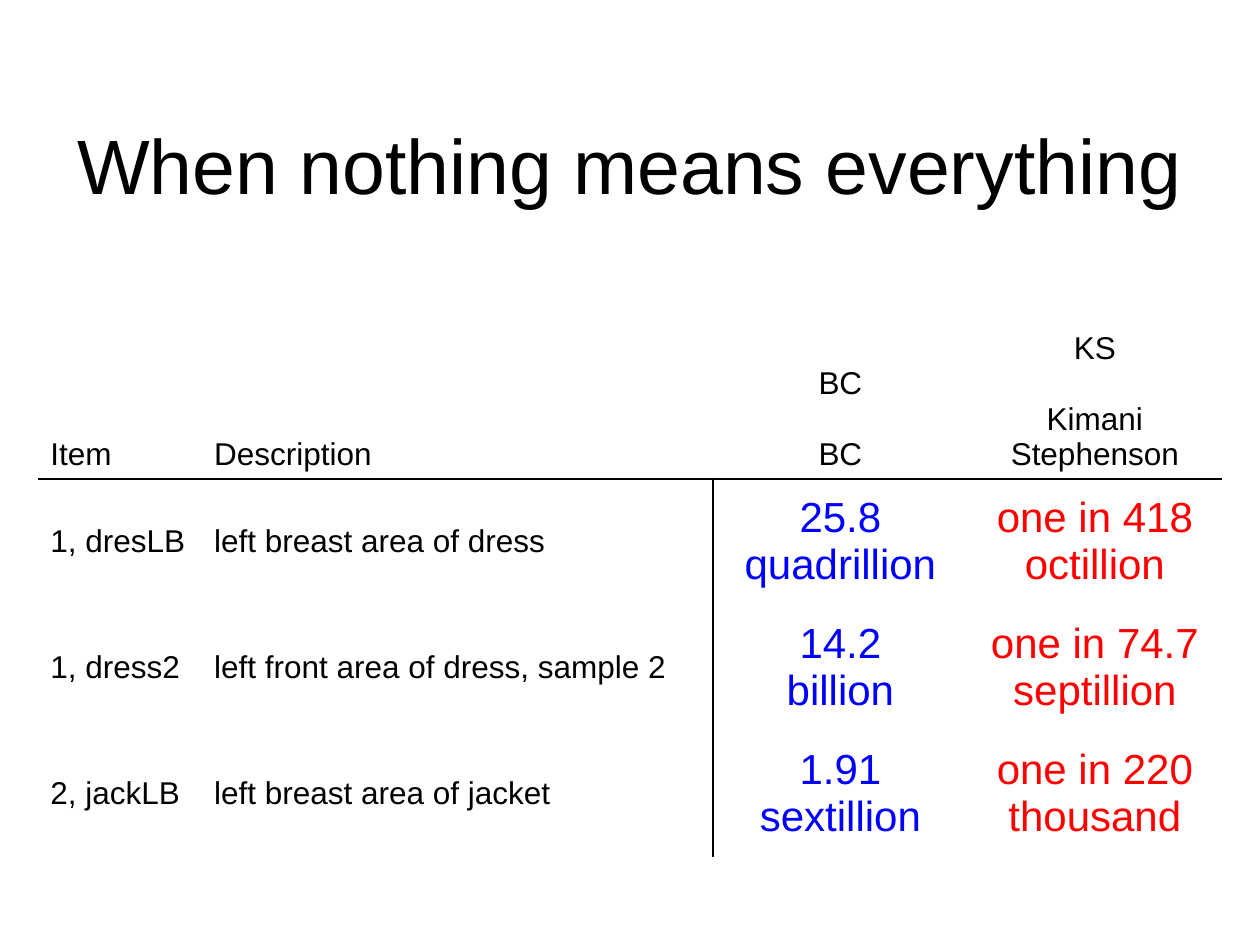
from dataclasses import dataclass

from lxml.etree import SubElement
from pptx import Presentation
from pptx.dml.color import RGBColor
from pptx.enum.text import MSO_ANCHOR, PP_ALIGN
from pptx.oxml.ns import qn
from pptx.util import Inches, Pt

BLACK = RGBColor(0, 0, 0)
BLUE = RGBColor(0, 0, 255)
RED = RGBColor(255, 0, 0)
FONT = "Arial"
COLS = (1.3, 4.06, 2.02, 2.02)
ROWS = (1.3, 1, 1, 1)
HEAD = ("Item", "Description", "BC\nBC", "KS\nKimani Stephenson")
BODY = (
    ("1, dresLB", "left breast area of dress", "25.8 quadrillion", "one in 418 octillion"),
    ("1, dress2", "left front area of dress, sample 2", "14.2\vbillion", "one in 74.7 septillion"),
    ("2, jackLB", "left breast area of jacket", "1.91 sextillion", "one in 220 thousand"),
)


@dataclass(frozen=True)
class Style:
    size: int
    color: RGBColor
    align: PP_ALIGN


TITLE = Style(44, BLACK, PP_ALIGN.CENTER)
LEFT = Style(18, BLACK, PP_ALIGN.LEFT)
LABEL = Style(18, BLACK, PP_ALIGN.CENTER)
BODY_LOOK = (LEFT, LEFT, Style(24, BLUE, PP_ALIGN.CENTER), Style(24, RED, PP_ALIGN.CENTER))
HEAD_LOOK = (LEFT, LEFT, LABEL, LABEL)


def write(frame, text: str, style: Style) -> None:
    frame.text = text
    for i, para in enumerate(frame.paragraphs):
        para.alignment = style.align
        para.space_before = Pt(20.5 if i else 0)
        para.font.name = FONT
        para.font.size = Pt(style.size)
        para.font.color.rgb = style.color


def rule(cell, sides: str) -> None:
    props = cell._tc.get_or_add_tcPr()
    for side in "LRTB":
        line = SubElement(props, qn(f"a:ln{side}"), w=str(Pt(1.5)))
        if side in sides:
            fill = SubElement(line, qn("a:solidFill"))
            SubElement(fill, qn("a:srgbClr"), val=str(BLACK))
        else:
            SubElement(line, qn("a:noFill"))


def edges(row: int, col: int) -> str:
    if row == 0:
        return "B"
    return ("T" if row == 1 else "") + {1: "R", 2: "L"}.get(col, "")


def add_title(slide) -> None:
    box = slide.shapes.add_textbox(Inches(0.05), Inches(0.67), Inches(9.9), Inches(1.25))
    box.text_frame.word_wrap = True
    box.text_frame.vertical_anchor = MSO_ANCHOR.MIDDLE
    write(box.text_frame, "When nothing means everything", TITLE)


def add_grid(slide) -> None:
    table = slide.shapes.add_table(
        len(ROWS), len(COLS), Inches(0.3), Inches(2.5), Inches(sum(COLS)), Inches(sum(ROWS))
    ).table
    table.horz_banding = False
    table.first_row = False
    for col, width in zip(table.columns, COLS):
        col.width = Inches(width)
    for row, height in zip(table.rows, ROWS):
        row.height = Inches(height)
    for r, texts in enumerate((HEAD, *BODY)):
        looks = BODY_LOOK if r else HEAD_LOOK
        for c, (text, look) in enumerate(zip(texts, looks)):
            cell = table.cell(r, c)
            cell.vertical_anchor = MSO_ANCHOR.MIDDLE if r else MSO_ANCHOR.BOTTOM
            write(cell.text_frame, text, look)
            rule(cell, edges(r, c))
            cell.fill.background()


def main() -> None:
    """Build the slide that sets two sets of match odds side by side."""
    deck = Presentation()
    deck.slide_width, deck.slide_height = Inches(10), Inches(7.5)
    slide = deck.slides.add_slide(deck.slide_layouts[6])
    add_title(slide)
    add_grid(slide)
    deck.save("out.pptx")


if __name__ == "__main__":
    main()
